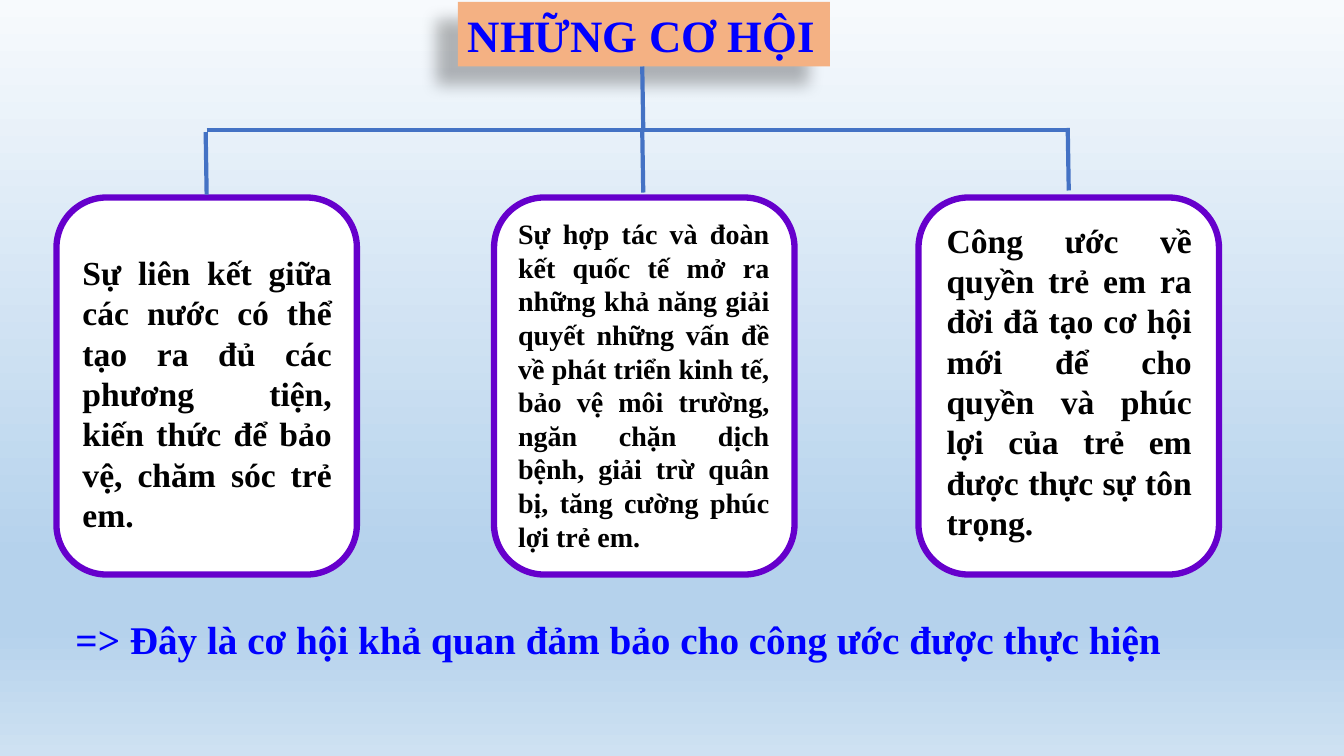
from lxml.etree import SubElement as Sub
from pptx import Presentation
from pptx.dml.color import RGBColor as RGB
from pptx.enum.shapes import MSO_CONNECTOR as CON, MSO_SHAPE as SHAPE
from pptx.enum.text import MSO_AUTO_SIZE as FIT, PP_ALIGN as ALIGN
from pptx.oxml.ns import qn
from pptx.util import Inches as In, Pt

BLUE = RGB(0x00, 0x00, 0xFF)
BLACK = RGB(0x00, 0x00, 0x00)
WHITE = RGB(0xFF, 0xFF, 0xFF)
PEACH = RGB(0xF4, 0xB1, 0x83)
VIOLET = RGB(0x66, 0x00, 0xCC)
STEEL = RGB(0x44, 0x72, 0xC4)
SKY = [
    (0, RGB(0xF7, 0xFA, 0xFD)),
    (74, RGB(0xB5, 0xD2, 0xEC)),
    (83, RGB(0xB5, 0xD2, 0xEC)),
    (100, RGB(0xCE, 0xE1, 0xF2)),
]

deck = Presentation()
deck.slide_width, deck.slide_height = In(13.33), In(7.5)
slide = deck.slides.add_slide(deck.slide_layouts[6])
shapes = slide.shapes

back = slide.background.fill
back.gradient()
back.gradient_angle = 270
stops = slide.element.find(".//" + qn("a:gsLst"))
for stop in list(stops):
    stops.remove(stop)
for share, tint in SKY:
    stop = Sub(stops, qn("a:gs"), pos=str(share * 1000))
    Sub(stop, qn("a:srgbClr"), val=str(tint))


def write(box, words, size, color, align=ALIGN.LEFT):
    frame = box.text_frame
    frame.text = words
    frame.word_wrap = True
    frame.auto_size = FIT.SHAPE_TO_FIT_TEXT
    para = frame.paragraphs[0]
    para.alignment = align
    font = para.runs[0].font
    font.name, font.size, font.bold = "Times New Roman", Pt(size), True
    font.color.rgb = color


title = shapes.add_shape(SHAPE.RECTANGLE, In(4.54), In(0.02), In(3.69), In(0.64))
title.fill.solid()
title.fill.fore_color.rgb = PEACH
title.line.fill.background()
write(title, "NHỮNG CƠ HỘI", 32, BLUE)
glow = Sub(
    Sub(title.element.spPr, qn("a:effectLst")), qn("a:outerShdw"),
    blurRad=str(Pt(11.8)), dist=str(Pt(19.7)), dir=str(141 * 60000),
    algn="ctr", rotWithShape="0",
)
shade = Sub(glow, qn("a:srgbClr"), val=str(BLACK))
Sub(shade, qn("a:alpha"), val="28000")

CARDS = [
    (0.56, 0.72, 2.45, 2.67, 2.93, 24,
     "Sự liên kết giữa các nước có thể tạo ra đủ các phương tiện, "
     "kiến thức để bảo vệ, chăm sóc trẻ em."),
    (4.9, 5.04, 2.1, 2.69, 3.47, 20,
     "Sự hợp tác và đoàn kết quốc tế mở ra những khả năng giải quyết "
     "những vấn đề về phát triển kinh tế, bảo vệ môi trường, ngăn chặn "
     "dịch bệnh, giải trừ quân bị, tăng cường phúc lợi trẻ em."),
    (9.11, 9.29, 2.13, 2.63, 3.33, 24,
     "Công ước về quyền trẻ em ra đời đã tạo cơ hội mới để cho quyền "
     "và phúc lợi của trẻ em được thực sự tôn trọng."),
]
for edge, left, top, wide, high, size, words in CARDS:
    card = shapes.add_shape(SHAPE.ROUNDED_RECTANGLE, In(edge), In(1.96), In(2.98), In(3.74))
    card.shadow.inherit = False
    card.fill.solid()
    card.fill.fore_color.rgb = WHITE
    card.line.color.rgb = VIOLET
    card.line.width = Pt(4.5)
    label = shapes.add_textbox(In(left), In(top), In(wide), In(high))
    write(label, words, size, BLACK, ALIGN.JUSTIFY)

DROP = 0.62
stems = [(6.37, 0.66), (2.04, 1.31), (6.37, 1.29), (10.59, 1.27)]
lines = [(x, y, x + 0.01, y + DROP) for x, y in stems]
lines.append((2.05, 1.29, 10.58, 1.29))
for ends in lines:
    line = shapes.add_connector(CON.STRAIGHT, *map(In, ends))
    line.line.color.rgb = STEEL
    line.line.width = Pt(3)
    Sub(line.element.spPr, qn("a:effectLst"))

close = shapes.add_textbox(In(0.65), In(6.06), In(11.11), In(0.57))
write(close, "=> Đây là cơ hội khả quan đảm bảo cho công ước được thực hiện", 28, BLUE)

deck.save("out.pptx")
